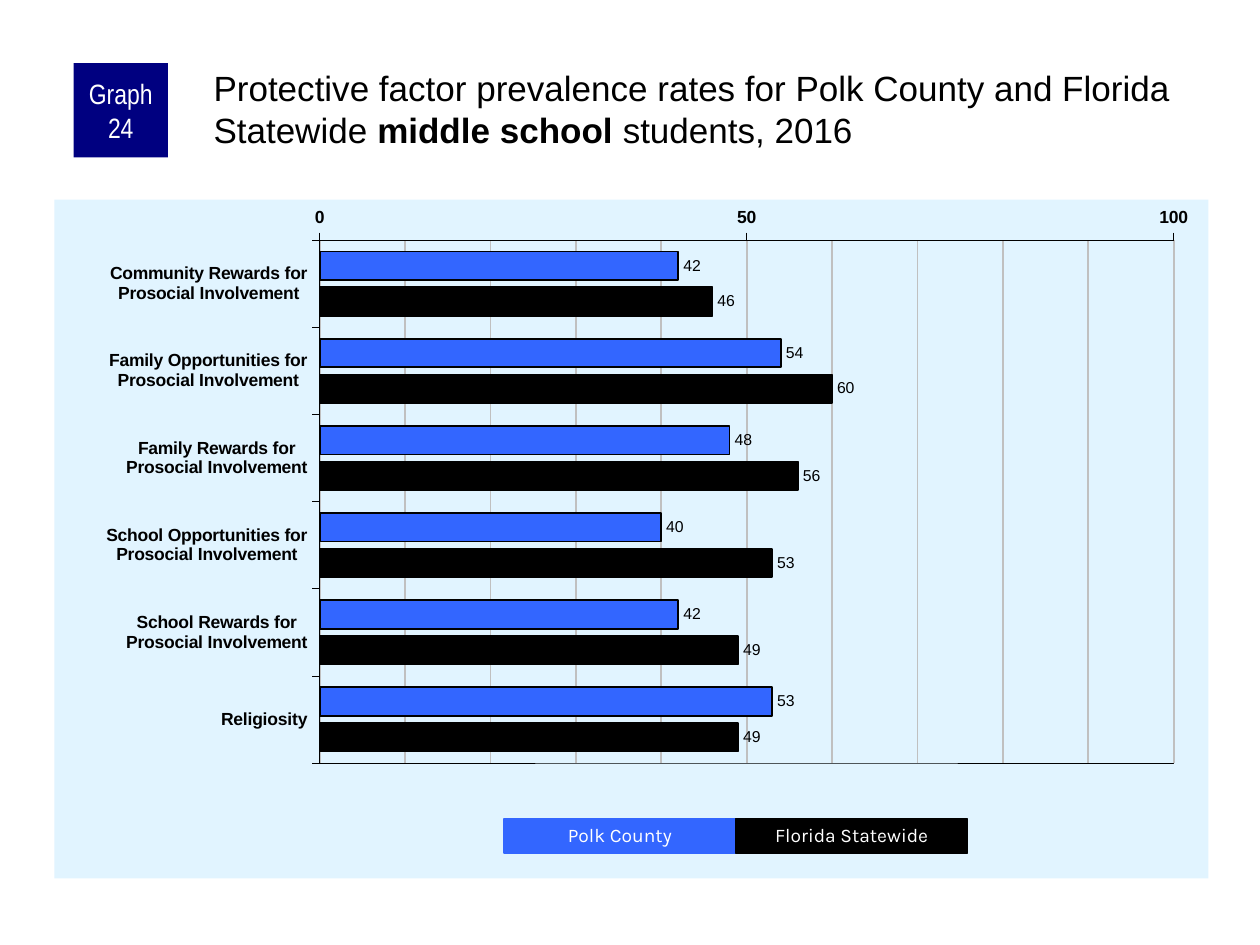
import copy
import pptx
import pptx.util
import pptx.chart.data
import pptx.dml.color
import pptx.enum.chart
import pptx.enum.shapes
import pptx.enum.text
import pptx.oxml
import pptx.oxml.ns

Pt = pptx.util.Pt
ENUM = pptx.enum.chart
TEXT = pptx.enum.text
BLACK, BLUE, NAVY, PALE, GREY, WHITE = (
    "000000", "3366FF", "000080", "E1F4FF", "C0C0C0", "FFFFFF")

TITLE = [
    ("Protective factor prevalence rates for Polk County and Florida Statewide ", False),
    ("middle school ", True),
    ("students, 2016", False),
]
RATES = [
    ("Community Rewards for\nProsocial Involvement", 42, 46),
    ("Family Opportunities for\nProsocial Involvement", 54, 60),
    ("Family Rewards for\nProsocial Involvement", 48, 56),
    ("School Opportunities for\nProsocial Involvement", 40, 53),
    ("School Rewards for\nProsocial Involvement", 42, 49),
    ("Religiosity", 53, 49),
]
GROUPS = [("Polk County", BLUE), ("Florida Statewide", BLACK)]
PLOT = {"x": 0.23, "y": 0.06, "w": 0.74, "h": 0.77}


def paint(color, hue):
    color.rgb = pptx.dml.color.RGBColor.from_string(hue)


def fill(part, hue):
    part.fill.solid()
    paint(part.fill.fore_color, hue)


def stroke(line, hue, width):
    paint(line.color, hue)
    line.width = Pt(width)


def style(font, name, size, hue=BLACK, bold=None):
    font.name, font.size, font.bold = name, Pt(size), bold
    paint(font.color, hue)


def margins(frame, left, top, right, bottom):
    frame.margin_left, frame.margin_top = Pt(left), Pt(top)
    frame.margin_right, frame.margin_bottom = Pt(right), Pt(bottom)


def xml(tag, body):
    return pptx.oxml.parse_xml(
        f"<c:{tag} {pptx.oxml.ns.nsdecls('c', 'a')}>{body}</c:{tag}>")


def add_title(slide):
    title = slide.shapes.title
    title.left, title.top, title.width, title.height = Pt(120), Pt(36), Pt(570), Pt(60)
    frame = title.text_frame
    frame.word_wrap = True
    frame.auto_size = TEXT.MSO_AUTO_SIZE.NONE
    frame.vertical_anchor = TEXT.MSO_ANCHOR.TOP
    margins(frame, 2, 2, 0, 0)
    par = frame.paragraphs[0]
    par.alignment = TEXT.PP_ALIGN.LEFT
    for words, bold in TITLE:
        run = par.add_run()
        run.text = words
        style(run.font, "Arial", 20, BLACK, bold)


def add_block(slide, box, words, hue, font, size):
    block = slide.shapes.add_shape(
        pptx.enum.shapes.MSO_SHAPE.RECTANGLE, *map(Pt, box))
    block.shadow.inherit = False
    fill(block, hue)
    stroke(block.line, hue, 0.75)
    frame = block.text_frame
    frame.word_wrap = True
    frame.vertical_anchor = TEXT.MSO_ANCHOR.MIDDLE
    margins(frame, 3.6, 0, 3.6, 0)
    par = frame.paragraphs[0]
    par.text = words
    par.alignment = TEXT.PP_ALIGN.CENTER
    style(par.font, font, size, WHITE)
    return block


def add_rates(slide):
    names, *columns = zip(*RATES)
    data = pptx.chart.data.CategoryChartData()
    data.categories = names
    for (name, _), values in zip(GROUPS, columns):
        data.add_series(name, values)
    chart = slide.shapes.add_chart(
        ENUM.XL_CHART_TYPE.BAR_CLUSTERED,
        Pt(31), Pt(114), Pt(659.5), Pt(388), data).chart
    chart.has_legend = chart.has_title = False
    style(chart.font, "Arial", 11.8)

    plot = chart.plots[0]
    plot.vary_by_categories = False
    plot.gap_width, plot.overlap = 80, -25
    for series, (_, hue) in zip(plot.series, GROUPS):
        fill(series.format, hue)
        stroke(series.format.line, BLACK, 1)
        labels = series.data_labels
        labels.show_value = True
        labels.position = ENUM.XL_LABEL_POSITION.OUTSIDE_END
        style(labels.font, "Arial", 9)

    cats, scale = chart.category_axis, chart.value_axis
    for axis in (cats, scale):
        axis.major_tick_mark = ENUM.XL_TICK_MARK.OUTSIDE
        axis.minor_tick_mark = ENUM.XL_TICK_MARK.NONE
        stroke(axis.format.line, BLACK, 0.25)
        style(axis.tick_labels.font, "Arial", 10, BLACK, True)
    cats.reverse_order = True
    cats.crosses = ENUM.XL_AXIS_CROSSES.MAXIMUM
    scale.minimum_scale, scale.maximum_scale = 0, 100
    scale.major_unit, scale.minor_unit = 50, 10
    scale.has_minor_gridlines = True
    stroke(scale.major_gridlines.format.line, GREY, 1)
    frame_chart(chart)


def frame_chart(chart):
    """Match minor to major gridlines, fix and outline the plot, fill the chart."""
    root = chart.element.chart
    area = root.plotArea
    major, minor = (area.find(".//" + pptx.oxml.ns.qn(f"c:{kind}Gridlines"))
                    for kind in ("major", "minor"))
    minor.append(copy.deepcopy(major[0]))
    for old in area.findall(pptx.oxml.ns.qn("c:layout")):
        area.remove(old)
    place = '<c:layoutTarget val="inner"/>'
    place += "".join(f'<c:{side}Mode val="edge"/>' for side in "xy")
    place += "".join(f'<c:{key} val="{part}"/>' for key, part in PLOT.items())
    area.insert(0, xml("layout", f"<c:manualLayout>{place}</c:manualLayout>"))
    area.append(xml("spPr", f'<a:noFill/><a:ln w="{Pt(0.25)}"><a:solidFill>'
                    f'<a:srgbClr val="{BLACK}"/></a:solidFill></a:ln>'))
    root.addnext(xml("spPr", f'<a:solidFill><a:srgbClr val="{PALE}"/></a:solidFill>'
                     "<a:ln><a:noFill/></a:ln>"))


def main():
    deck = pptx.Presentation()
    deck.slide_width, deck.slide_height = Pt(720), Pt(540)
    slide = deck.slides.add_slide(deck.slide_layouts[5])
    add_rates(slide)
    badge = add_block(slide, (42, 36, 54, 54), "Graph 24", NAVY, "Arial Narrow", 16)
    badge.line.fill.background()
    add_title(slide)
    wide = 132.5
    for i, (name, hue) in enumerate(GROUPS):
        key = add_block(slide, (288 + i * wide, 468, wide, 19.5), name, hue, "Karla", 11)
        key.text_frame.paragraphs[0].line_spacing = 0.9
    deck.save("out.pptx")


if __name__ == "__main__":
    main()
